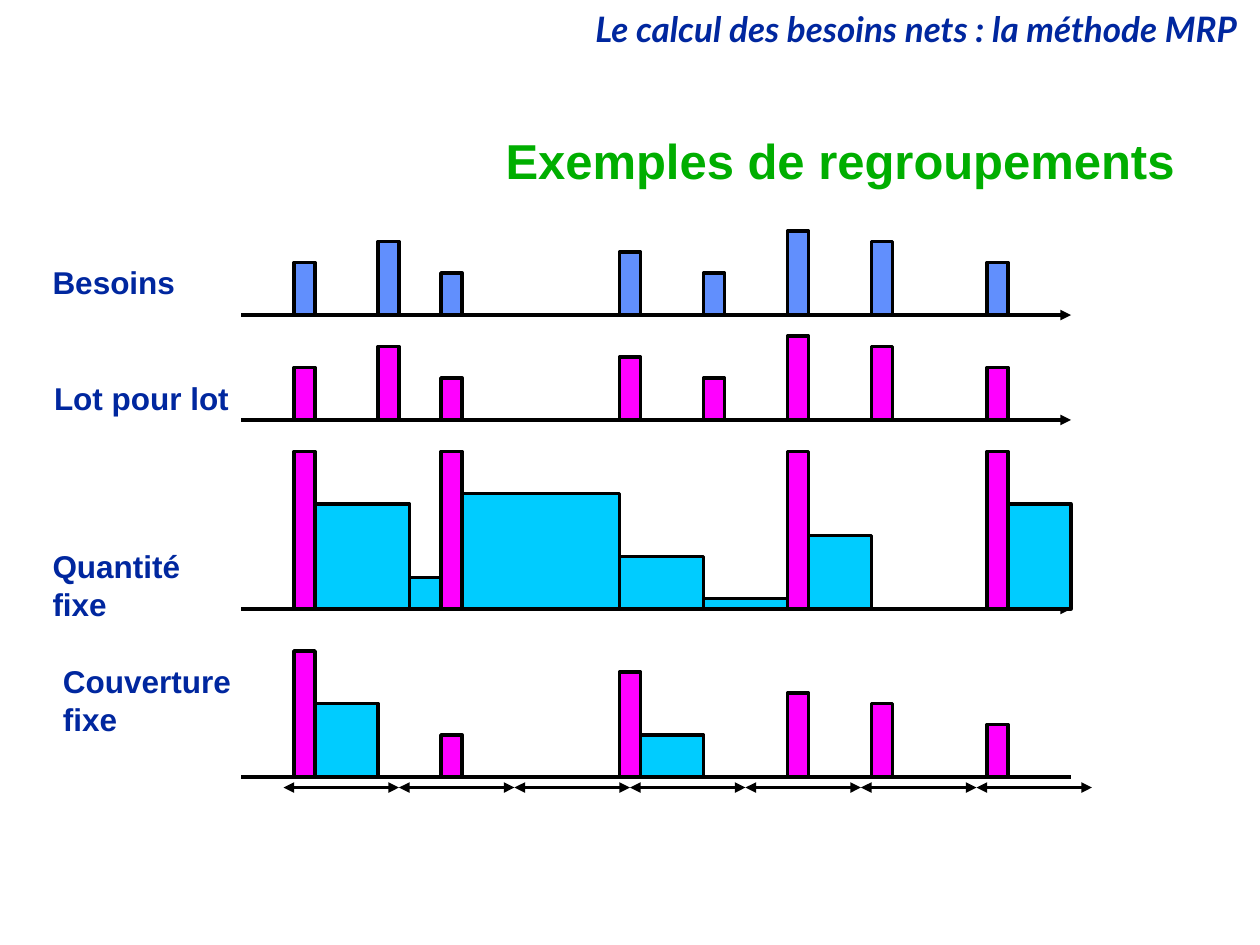
"""Build the slide comparing four ways of grouping MRP requirements into lots."""
from lxml.etree import SubElement
from pptx import Presentation
from pptx.dml.color import RGBColor
from pptx.enum.shapes import MSO_CONNECTOR as Connector, MSO_SHAPE as Shape
from pptx.enum.text import MSO_ANCHOR as Anchor, MSO_AUTO_SIZE as AutoSize, PP_ALIGN as Align
from pptx.oxml.ns import qn
from pptx.util import Cm, Pt

GRID = 2.54 / 12
NEED, LOT, STOCK = "618FFD", "FF00FF", "00CCFF"
NAVY, GREEN, BLACK = "00279F", "00AE00", "000000"


def color(code):
    return RGBColor.from_string(code)


def add_line(shapes, left, right, level, ends):
    connector = shapes.add_connector(
        Connector.STRAIGHT, Cm(left * GRID), Cm(level * GRID), Cm(right * GRID), Cm(level * GRID))
    connector.line.width = Pt(2)
    connector.line.color.rgb = color(BLACK)
    properties = connector._element.spPr
    for end in ends:
        SubElement(properties.find(qn("a:ln")), qn(f"a:{end}"), type="triangle")
    SubElement(properties, qn("a:effectLst"))


presentation = Presentation()
presentation.slide_width, presentation.slide_height = Cm(25.4), Cm(19.05)
slide = presentation.slides.add_slide(presentation.slide_layouts[5])
shapes = slide.shapes

needs = [(28, 2, 5), (36, 2, 7), (42, 2, 4), (59, 2, 6),
         (67, 2, 4), (75, 2, 8), (83, 2, 7), (94, 2, 5)]
fixed_lots = [(left, 2, 15) for left in (28, 42, 75, 94)]
fixed_stock = [(30, 9, 10), (39, 3, 3), (44, 15, 11), (59, 8, 5),
               (67, 8, 1), (77, 6, 7), (96, 6, 10)]
cover_lots = [(28, 2, 12), (42, 2, 4), (59, 2, 10), (75, 2, 8), (83, 2, 7), (94, 2, 5)]
cover_stock = [(30, 6, 7), (61, 6, 4)]

rows = [
    (30, ["tailEnd"], [(NEED, needs)]),
    (40, ["tailEnd"], [(LOT, needs)]),
    (58, ["tailEnd"], [(STOCK, fixed_stock), (LOT, fixed_lots)]),
    (74, [], [(STOCK, cover_stock), (LOT, cover_lots)]),
]
for baseline, ends, series in rows:
    add_line(shapes, 23, 102, baseline, ends)
    for fill, bars in series:
        for left, width, height in bars:
            bar = shapes.add_shape(Shape.RECTANGLE, Cm(left * GRID), Cm((baseline - height) * GRID),
                                   Cm(width * GRID), Cm(height * GRID))
            bar.shadow.inherit = False
            bar.fill.solid()
            bar.fill.fore_color.rgb = color(fill)
            bar.line.color.rgb = color(BLACK)
            bar.line.width = Pt(2)

for period in range(7):
    start = 27 + 11 * period
    add_line(shapes, start, start + 11, 75, ["headEnd", "tailEnd"])

title_box = (3.18, 2.34, 20.75, 1.9)
title = shapes.title
title.left, title.top, title.width, title.height = [Cm(length) for length in title_box]
header = shapes.add_textbox(Cm(0), Cm(0.13), Cm(25.2), Cm(1.02))

title_font = {"name": "Arial", "size": Pt(28), "bold": True}
header_font = {"name": "Lato", "size": Pt(20), "bold": True, "italic": True}
label_font = {"name": "Arial", "size": Pt(18), "bold": True}
right_aligned = {"alignment": Align.RIGHT, "line_spacing": 0.9}
left_aligned = {"alignment": Align.LEFT}

texts = [
    (title, ["Exemples de regroupements"], title_font, GREEN, right_aligned,
     {"word_wrap": True, "vertical_anchor": Anchor.MIDDLE, "auto_size": AutoSize.NONE}),
    (header, ["Le calcul des besoins nets : la méthode MRP"], header_font, NAVY, right_aligned,
     {"word_wrap": True}),
]
labels = [
    (["Besoins"], 0.81, 5.18, 2.97, 1.02),
    (["Lot pour lot"], 0.84, 7.52, 4.04, 1.02),
    (["Quantité", "fixe"], 0.81, 10.9, 3.1, 1.78),
    (["Couverture", "fixe"], 1.02, 13.23, 3.89, 1.78),
]
for lines, *box in labels:
    label = shapes.add_textbox(*[Cm(length) for length in box])
    texts.append((label, lines, label_font, NAVY, left_aligned, {"word_wrap": False}))

for shape, lines, font_values, code, paragraph_values, frame_values in texts:
    frame = shape.text_frame
    frame.text = "\n".join(lines)
    for name, value in frame_values.items():
        setattr(frame, name, value)
    for paragraph in frame.paragraphs:
        for name, value in paragraph_values.items():
            setattr(paragraph, name, value)
        font = paragraph.runs[0].font
        font.color.rgb = color(code)
        for name, value in font_values.items():
            setattr(font, name, value)

presentation.save("out.pptx")
